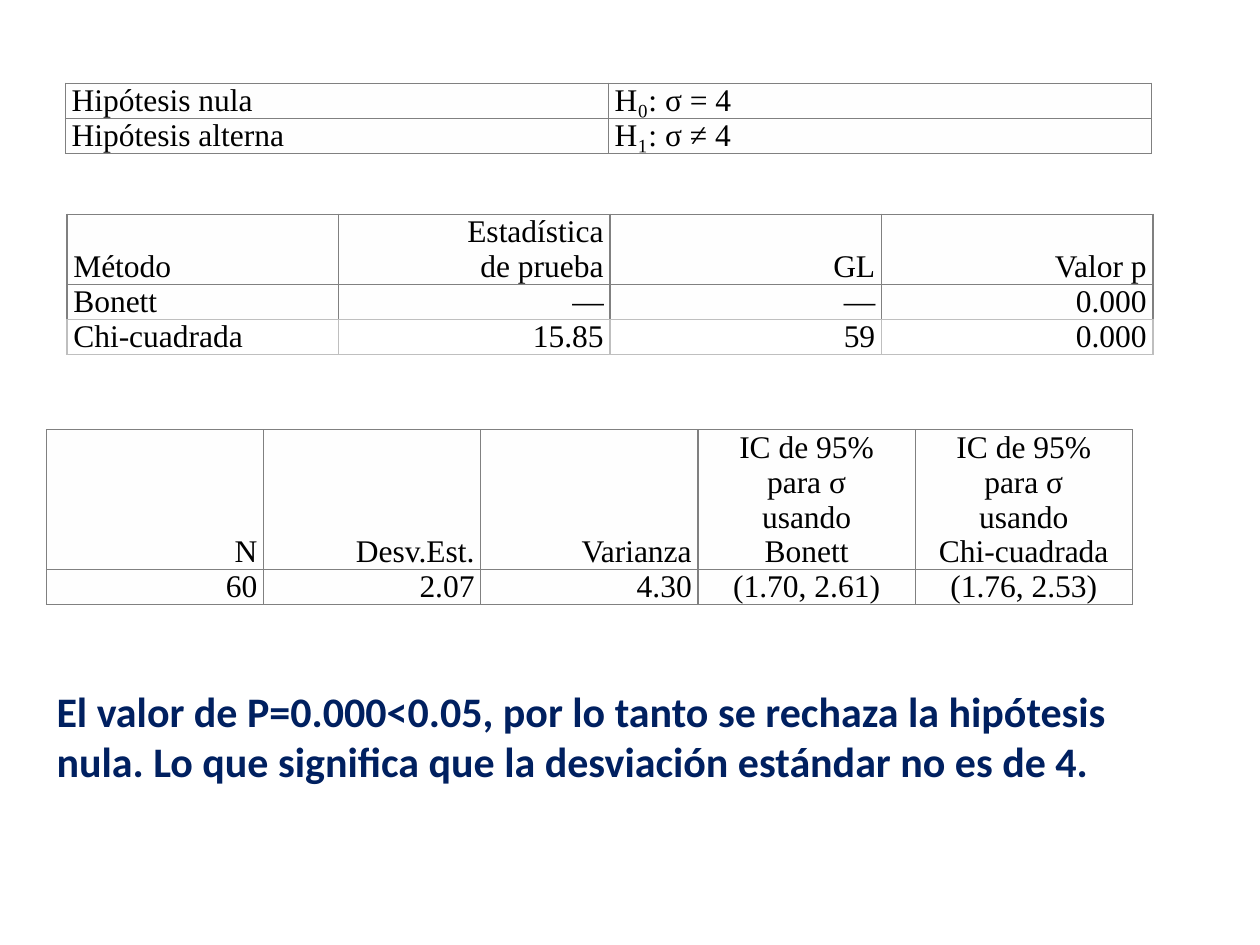
from lxml import etree
from pptx import Presentation
from pptx.dml.color import RGBColor
from pptx.enum import text as t
from pptx.oxml import ns
from pptx.util import Pt

LEFT, CENTER, RIGHT = t.PP_ALIGN.LEFT, t.PP_ALIGN.CENTER, t.PP_ALIGN.RIGHT
TOP, MIDDLE, BOTTOM = t.MSO_ANCHOR.TOP, t.MSO_ANCHOR.MIDDLE, t.MSO_ANCHOR.BOTTOM
GRAY, PALE, PAPER = "808080", "BFBFBF", "FEFEFE"
TABLE_WIDTH, LINE_HEIGHT = 620.6, 20

HEADER = dict(anchor=BOTTOM, edge=GRAY, bottom=GRAY, fill=PAPER)
BODY = dict(anchor=TOP, edge=GRAY, bottom=GRAY, fill=PAPER)
BODY_ABOVE_PALE = dict(BODY, bottom=PALE)
PALE_ROW = dict(anchor=MIDDLE, edge=PALE, bottom=PALE, fill=None)

TABLES = [
    dict(left=26.6, top=245.5, aligns=[RIGHT] * 3 + [CENTER] * 2, rows=[
        (HEADER, ["N", "Desv.Est.", "Varianza",
                  "IC de 95%\vpara σ\vusando\vBonett",
                  "IC de 95%\vpara σ\vusando\vChi-cuadrada"]),
        (BODY, ["60", "2.07", "4.30", "(1.70, 2.61)", "(1.76, 2.53)"]),
    ]),
    dict(left=37.4, top=47.5, aligns=[LEFT] * 2, rows=[
        (BODY, ["Hipótesis nula", "H₀: σ = 4"]),
        (BODY, ["Hipótesis alterna", "H₁: σ ≠ 4"]),
    ]),
    dict(left=38.3, top=122.4, aligns=[LEFT] + [RIGHT] * 3, rows=[
        (HEADER, ["Método", "Estadística\vde prueba", "GL", "Valor p"]),
        (BODY_ABOVE_PALE, ["Bonett", "—", "—", "0.000"]),
        (PALE_ROW, ["Chi-cuadrada", "15.85", "59", "0.000"]),
    ]),
]
CONCLUSION = ("El valor de P=0.000<0.05, por lo tanto se rechaza la hipótesis nula. "
              "Lo que significa que la desviación estándar no es de 4.")


def rgb(color):
    return RGBColor.from_string(color)


def format_runs(paragraph, font_name, size, color, bold=False):
    for run in paragraph.runs:
        run.font.name, run.font.size, run.font.bold = font_name, Pt(size), bold
        run.font.color.rgb = rgb(color)


def add_border(properties, side, color):
    line = etree.SubElement(properties, ns.qn("a:ln" + side), w=str(Pt(0.75)))
    solid = etree.SubElement(line, ns.qn("a:solidFill"))
    etree.SubElement(solid, ns.qn("a:srgbClr"), val=color)


def fill_cell(cell, wording, align, look):
    cell.text_frame.text = wording
    paragraph = cell.text_frame.paragraphs[0]
    paragraph.alignment = align
    format_runs(paragraph, "Times New Roman", 18, "000000")
    cell.vertical_anchor = look["anchor"]
    cell.margin_left = cell.margin_right = Pt(3.6)
    cell.margin_top = cell.margin_bottom = Pt(0)
    properties = cell._tc.get_or_add_tcPr()
    for side in "LRTB":
        add_border(properties, side, look["bottom" if side == "B" else "edge"])
    if look["fill"]:
        cell.fill.solid()
        cell.fill.fore_color.rgb = rgb(look["fill"])
    else:
        cell.fill.background()


def add_results(slide, left, top, aligns, rows):
    heights = [LINE_HEIGHT * max(wording.count("\v") + 1 for wording in cells)
               for _, cells in rows]
    table = slide.shapes.add_table(len(rows), len(aligns), Pt(left), Pt(top),
                                   Pt(TABLE_WIDTH), Pt(sum(heights))).table
    table.first_row = table.horz_banding = False
    for row, height, (look, cells) in zip(table.rows, heights, rows):
        row.height = Pt(height)
        for cell, wording, align in zip(row.cells, cells, aligns):
            fill_cell(cell, wording, align, look)


def main():
    deck = Presentation()
    deck.slide_width, deck.slide_height = Pt(720), Pt(540)
    slide = deck.slides.add_slide(deck.slide_layouts[6])
    for results in TABLES:
        add_results(slide, **results)
    conclusion = slide.shapes.add_textbox(Pt(25.2), Pt(388), Pt(641), Pt(65.5)).text_frame
    conclusion.word_wrap = True
    conclusion.auto_size = t.MSO_AUTO_SIZE.SHAPE_TO_FIT_TEXT
    conclusion.text = CONCLUSION
    format_runs(conclusion.paragraphs[0], "Calibri", 24, "002060", bold=True)
    deck.save("out.pptx")


if __name__ == "__main__":
    main()
